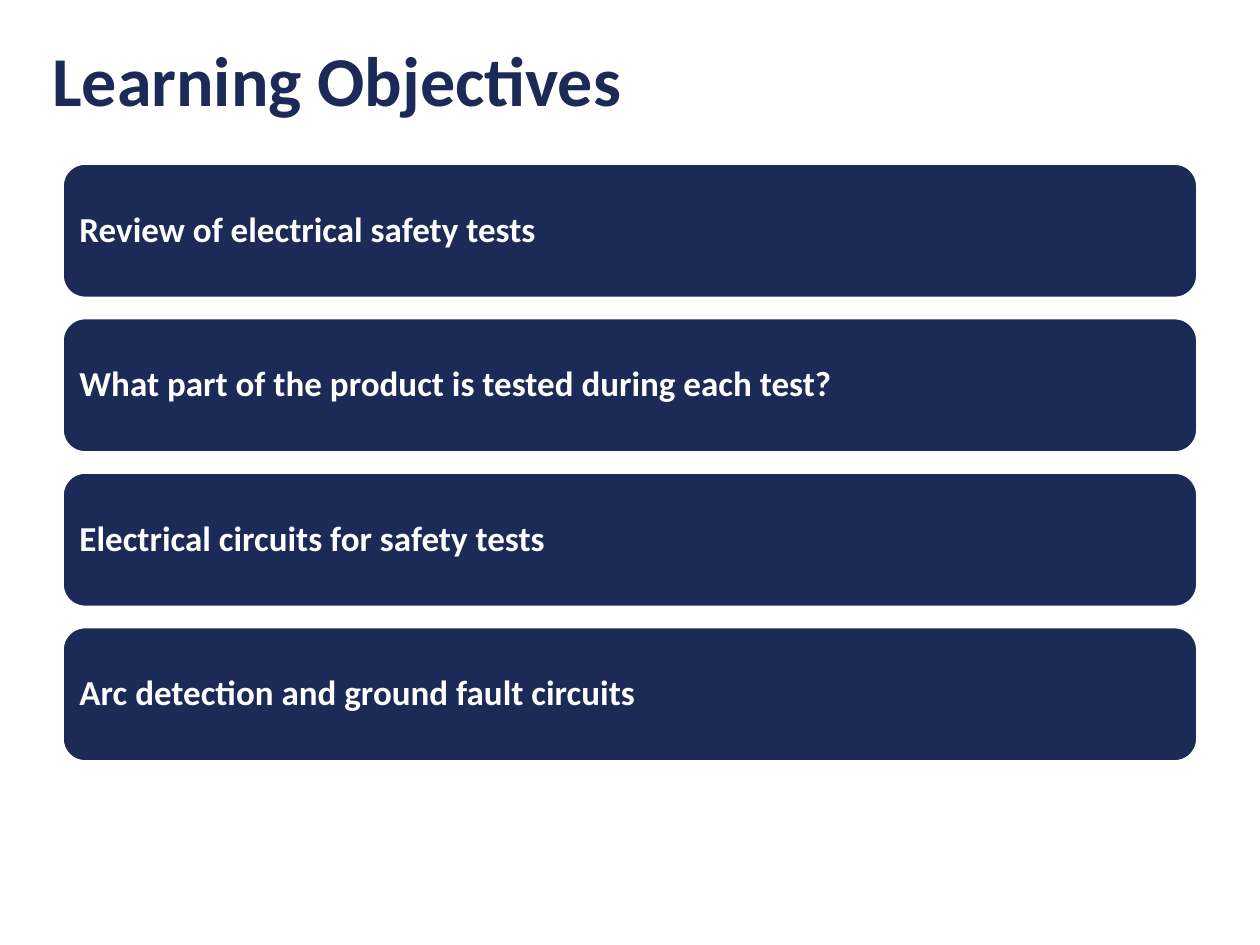
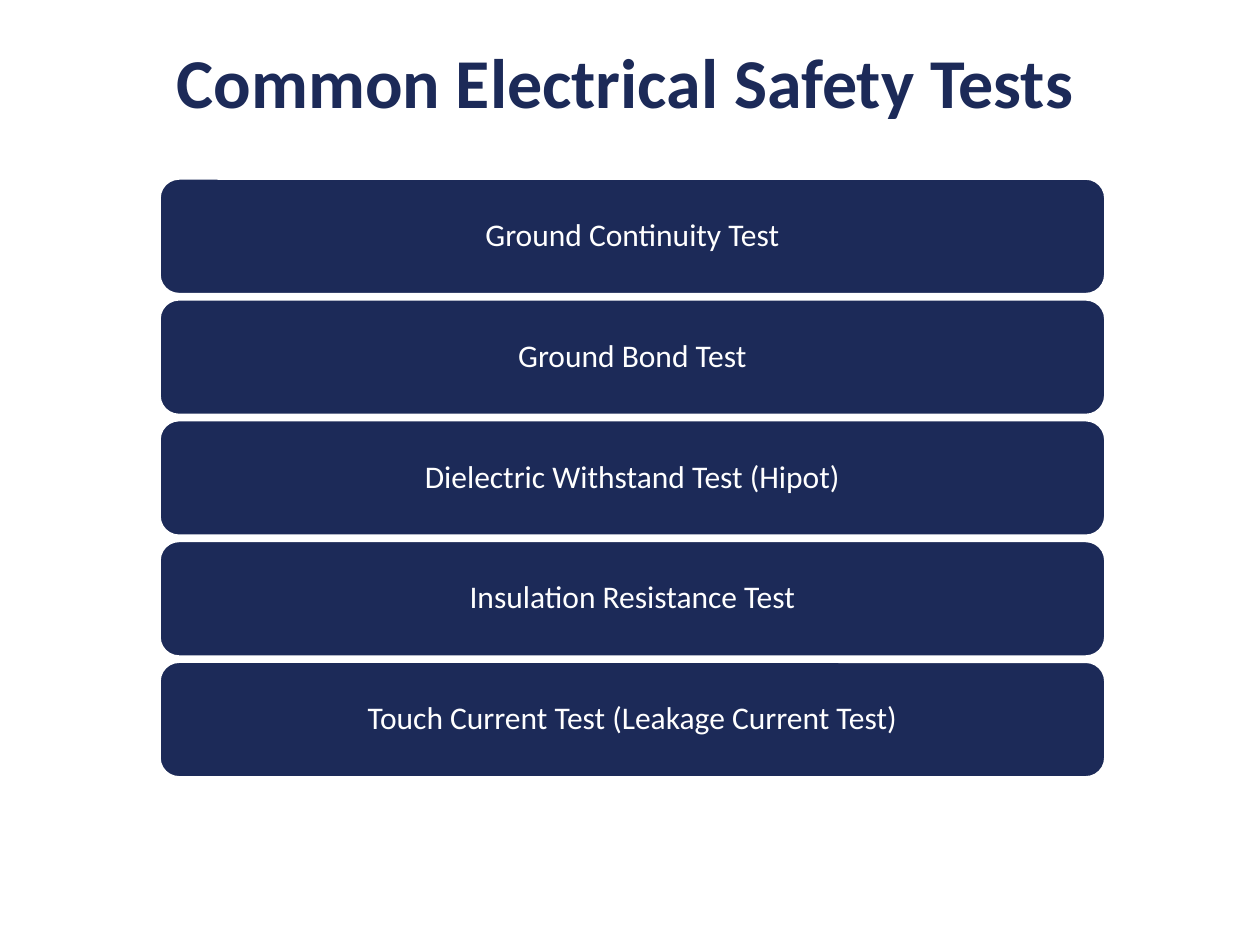
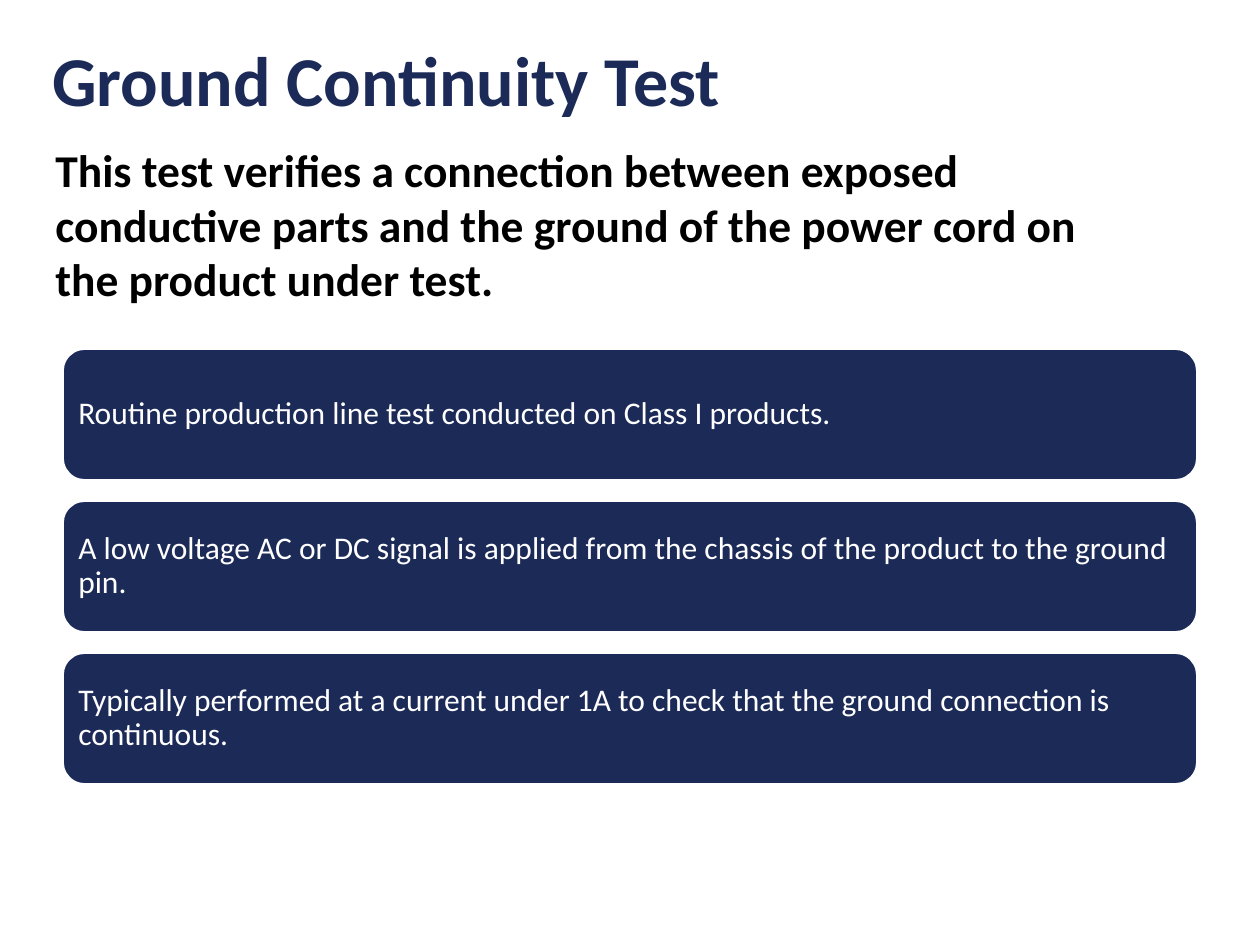
from dataclasses import dataclass

from pptx import Presentation
from pptx.dml.color import RGBColor
from pptx.enum.shapes import MSO_SHAPE
from pptx.enum.text import MSO_ANCHOR, PP_ALIGN
from pptx.util import Emu, Pt

# Content: title, optional statement and the rows of bars
SLIDES = [
    {
        "title": "Learning Objectives",
        "title_area": (40, 40, 1134, 173),
        "align": PP_ALIGN.LEFT,
        "bars": [
            "Review of electrical safety tests",
            "What part of the product is tested during each test?",
            "Electrical circuits for safety tests",
            "Arc detection and ground fault circuits",
        ],
        "bars_area": (63, 164, 1134, 597),
        "gap": 21,
        "insets": (10, 10),
        "bar_size": 20,
        "bar_bold": True,
    },
    {
        "title": "Common Electrical Safety Tests",
        "title_area": (42, 42, 1166, 173),
        "align": PP_ALIGN.CENTER,
        "bars": [
            "Ground Continuity Test",
            "Ground Bond Test",
            "Dielectric Withstand Test (Hipot)",
            "Insulation Resistance Test",
            "Touch Current Test (Leakage Current Test)",
        ],
        "bars_area": (160, 179, 945, 598),
        "gap": 6,
        "insets": (9, 5),
        "bar_size": 18,
        "bar_bold": False,
    },
    {
        "title": "Ground Continuity Test",
        "title_area": (40, 40, 1134, 173),
        "align": PP_ALIGN.LEFT,
        "statement": "This test verifies a connection between exposed conductive parts "
                     "and the ground of the power cord on the product under test.",
        "statement_area": (43, 136, 1113, 178),
        "bars": [
            "Routine production line test conducted on Class I products.",
            "A low voltage AC or DC signal is applied from the chassis of the product "
            "to the ground pin.",
            "Typically performed at a current under 1A to check that the ground "
            "connection is continuous.",
        ],
        "bars_area": (63, 349, 1134, 435),
        "gap": 21,
        "insets": (9, 9),
        "bar_size": 18,
        "bar_bold": False,
    },
]


@dataclass(frozen=True)
class Theme:
    font: str = "Calibri"
    navy: RGBColor = RGBColor(0x1C, 0x2A, 0x58)
    white: RGBColor = RGBColor(0xFF, 0xFF, 0xFF)
    black: RGBColor = RGBColor(0, 0, 0)
    title_size: int = 40
    statement_size: int = 26
    outline: int = 1
    tight: float = 0.9


THEME = Theme()
PAGE_SIZE = (1260, 945)
BLANK_LAYOUT = 6


def px(length):
    return Emu(round(length * 914400 / 126))


def write(shape, text, size, color, bold, align=PP_ALIGN.LEFT, spacing=1.0):
    """Fill a shape with one wrapped, formatted paragraph."""
    frame = shape.text_frame
    frame.word_wrap = True
    frame.text = text
    para = frame.paragraphs[0]
    para.alignment = align
    para.line_spacing = spacing
    font = para.runs[0].font
    font.name = THEME.font
    font.size = Pt(size)
    font.bold = bold
    font.color.rgb = color


def add_text(page, area, text, size, color, **style):
    box = page.shapes.add_textbox(*map(px, area))
    write(box, text, size, color, True, **style)


def add_bars(page, content):
    """Stack equal bars so that they and their gaps fill the area."""
    left, top, width, total = content["bars_area"]
    labels, gap = content["bars"], content["gap"]
    height = (total - gap * (len(labels) - 1)) / len(labels)
    side, edge = map(px, content["insets"])
    for row, label in enumerate(labels):
        bar_area = (left, top + row * (height + gap), width, height)
        bar = page.shapes.add_shape(MSO_SHAPE.ROUNDED_RECTANGLE, *map(px, bar_area))
        bar.shadow.inherit = False
        bar.fill.solid()
        bar.fill.fore_color.rgb = THEME.navy
        bar.line.color.rgb = THEME.white
        bar.line.width = Pt(THEME.outline)
        frame = bar.text_frame
        frame.margin_left = frame.margin_right = side
        frame.margin_top = frame.margin_bottom = edge
        frame.vertical_anchor = MSO_ANCHOR.MIDDLE
        write(bar, label, content["bar_size"], THEME.white, content["bar_bold"],
              content["align"], THEME.tight)


def main():
    deck = Presentation()
    deck.slide_width, deck.slide_height = map(px, PAGE_SIZE)
    for content in SLIDES:
        page = deck.slides.add_slide(deck.slide_layouts[BLANK_LAYOUT])
        add_bars(page, content)
        if "statement" in content:
            add_text(page, content["statement_area"], content["statement"],
                     THEME.statement_size, THEME.black)
        add_text(page, content["title_area"], content["title"], THEME.title_size,
                 THEME.navy, align=content["align"], spacing=THEME.tight)
    deck.save("out.pptx")


if __name__ == "__main__":
    main()
